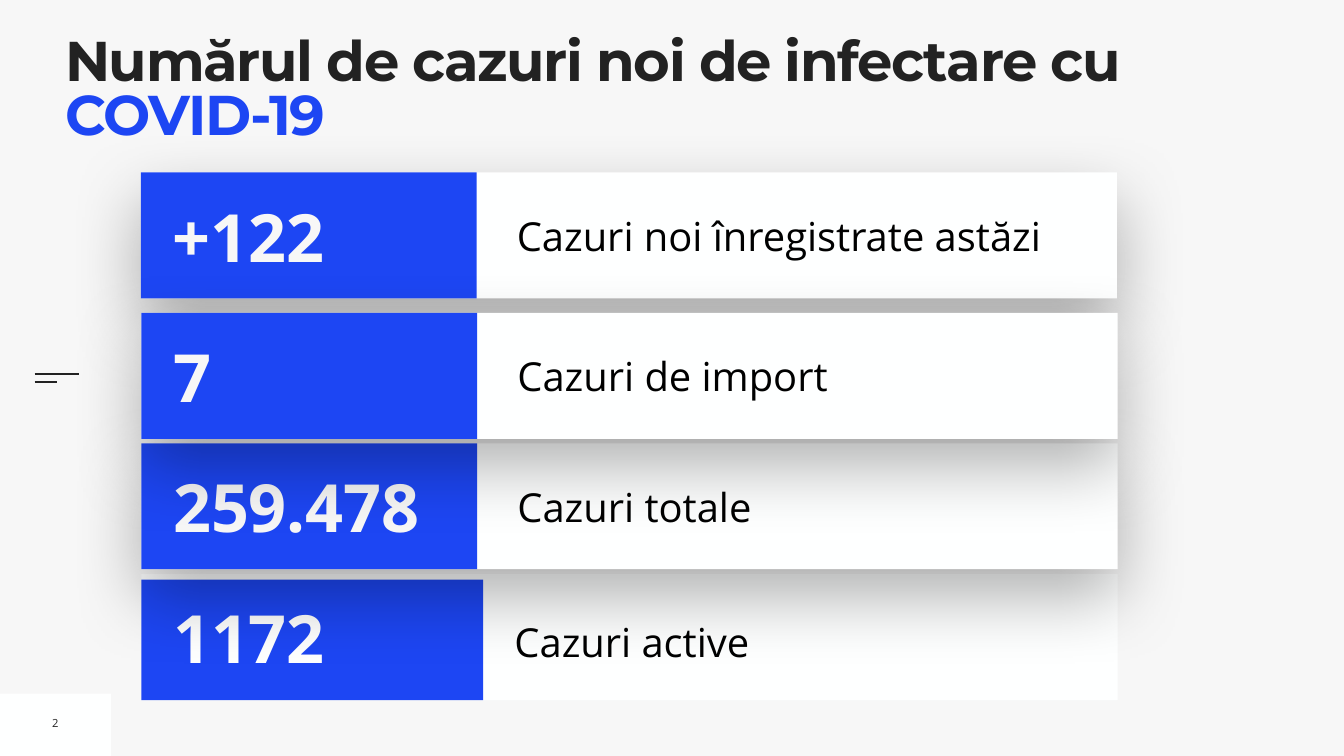
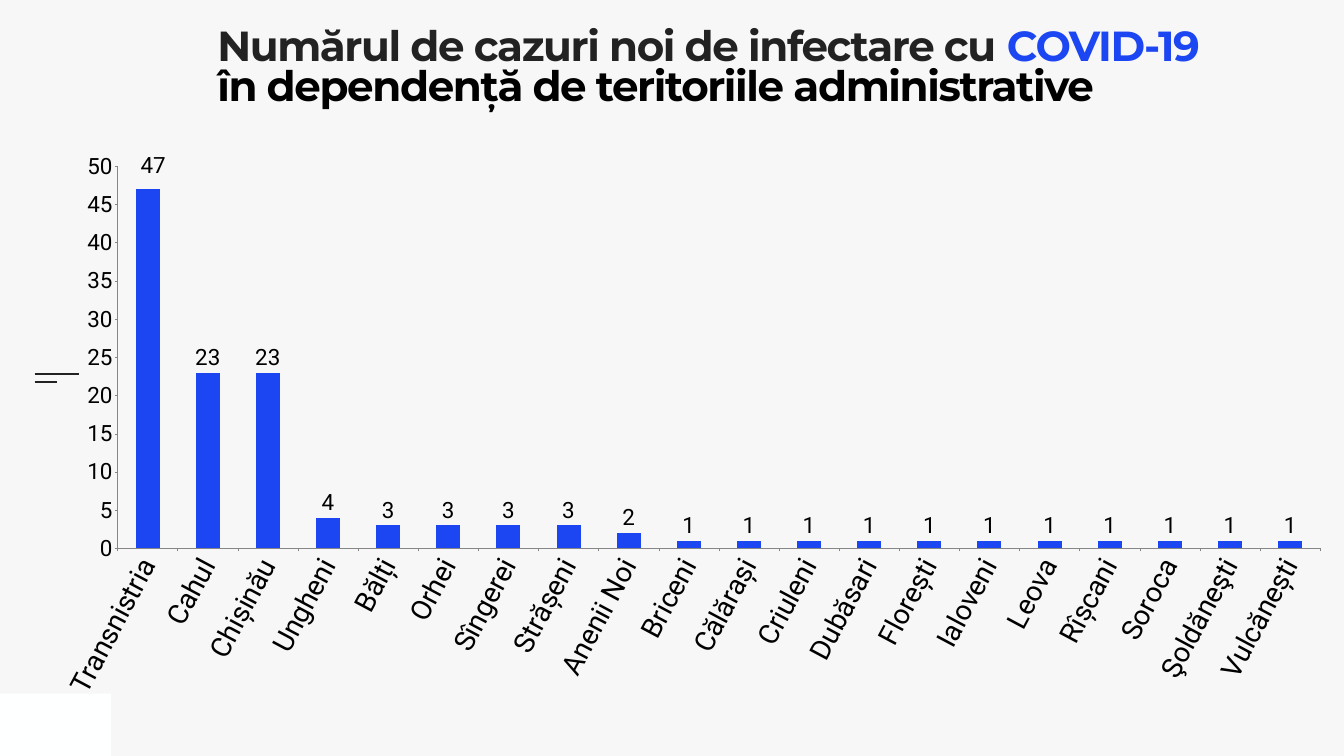
from lxml import etree
from pptx import Presentation
from pptx.chart.data import CategoryChartData
from pptx.dml.color import RGBColor
from pptx.enum import chart as kinds, shapes, text
from pptx.oxml import parse_xml
from pptx.oxml.ns import nsdecls, qn
from pptx.util import Cm, Pt

COLORS = {
    "paper": "F7F7F7",
    "white": "FEFFFF",
    "blue": "1D46F3",
    "ink": "222222",
    "black": "000000",
    "axis": "868686",
}
HEAD = "Numărul de cazuri noi de infectare cu "
VIRUS = "COVID-19"
CASES = {
    "Transnistria": 47, "Cahul": 23, "Chișinău": 23, "Ungheni": 4,
    "Bălți": 3, "Orhei": 3, "Sîngerei": 3, "Strășeni": 3, "Anenii Noi": 2,
    "Briceni": 1, "Călărași": 1, "Criuleni": 1, "Dubăsari": 1, "Florești": 1,
    "Ialoveni": 1, "Leova": 1, "Rîșcani": 1, "Soroca": 1, "Şoldăneşti": 1,
    "Vulcănești": 1,
}


def rgb(name):
    return RGBColor.from_string(COLORS[name])


def place(box):
    return [Cm(side) for side in box]


def style(font, face, size, color, bold=False):
    font.name, font.size, font.bold = face, Pt(size), bold
    font.color.rgb = rgb(color)


def block(parent, box, color):
    """Add a plain filled rectangle without line or shadow."""
    rect = parent.shapes.add_shape(shapes.MSO_SHAPE.RECTANGLE, *place(box))
    rect.fill.solid()
    rect.fill.fore_color.rgb = rgb(color)
    rect.line.fill.background()
    rect.shadow.inherit = False
    return rect


def shade(rect):
    """Give a rectangle a wide soft shadow that falls downwards."""
    effects = rect._element.spPr.find(qn("a:effectLst"))
    effects.append(parse_xml(
        f'<a:outerShdw {nsdecls("a")} blurRad="{Pt(100)}" dist="{Pt(40)}" '
        'dir="5400000" algn="ctr" rotWithShape="0"><a:srgbClr val="000000">'
        '<a:alpha val="30000"/></a:srgbClr></a:outerShdw>'))


def outline(parent, box):
    """Add an unfilled outline that carries text."""
    x, y, w, h = place(box)
    path = parent.shapes.build_freeform(x, y)
    path.add_line_segments([(x + w, y), (x + w, y + h), (x, y + h)])
    shape = path.convert_to_shape()
    shape.fill.background()
    shape.line.fill.background()
    shape.shadow.inherit = False
    return shape


def write(shape, words, size, color, bold=False, pad=0.25):
    frame = shape.text_frame
    frame.vertical_anchor = text.MSO_ANCHOR.MIDDLE
    frame.margin_left = frame.margin_right = Cm(pad)
    frame.margin_top = frame.margin_bottom = Cm(pad)
    frame.text = words
    para = frame.paragraphs[0]
    para.alignment = text.PP_ALIGN.LEFT
    style(para.runs[0].font, "Open Sans", size, color, bold)
    return para


def rule(slide, y, width):
    left = 1.75
    line = slide.shapes.add_connector(
        shapes.MSO_CONNECTOR.STRAIGHT, *place((left, y, left + width, y)))
    line.line.color.rgb = rgb("ink")
    line.line.width = Pt(3)
    etree.SubElement(line._element.spPr, qn("a:effectLst"))


def start(prs):
    """Add a slide with the corner block and the two side rules."""
    slide = prs.slides.add_slide(prs.slide_layouts[5])
    block(slide, (0, 34.96, 5.59, 3.14), "white")
    rule(slide, 18.84, 2.24)
    rule(slide, 19.26, 1.12)
    return slide


def title(slide, box, size, lines):
    """Fill the title; each line is a list of (words, color) pairs."""
    shape = slide.shapes.title
    shape.left, shape.top, shape.width, shape.height = place(box)
    frame = shape.text_frame
    frame.word_wrap = True
    frame.auto_size = text.MSO_AUTO_SIZE.NONE
    frame.vertical_anchor = text.MSO_ANCHOR.TOP
    frame.margin_left = frame.margin_right = 0
    frame.margin_top = frame.margin_bottom = 0
    for i, parts in enumerate(lines):
        para = frame.add_paragraph() if i else frame.paragraphs[0]
        para.alignment = text.PP_ALIGN.LEFT
        para.line_spacing = 0.8
        para.space_before = Pt(0)
        for words, color in parts:
            run = para.add_run()
            run.text = words
            style(run.font, "Montserrat", size, color, True)
            run._r.get_or_add_rPr().set("spc", "-195")


def row(slide, top, count, words, left=7.13, last=False):
    """Add a white band with a count on blue; the last band is flat."""
    group = slide.shapes.add_group_shape()
    band = block(group, (left, top, 49.2, 6.35), "white")
    if last:
        blue = (left, top + 0.28, 17.22, 6.07)
        spot = (left + 18.8, top + 1.47, 29.41, 3.18)
    else:
        shade(band)
        blue = (left, top, 16.92, 6.35)
        spot = (left + 18.7, top + 1.69, 29.87, 2.95)
    note = write(outline(group, spot), words, 57, "black",
                 pad=0 if last else 0.25)
    if last:
        note.line_spacing = 1.3
        note.space_before = Pt(20)
    block(group, blue, "blue")
    write(outline(group, (left + 1.35, top + 0.89, 15.32, 4.57)), count, 95,
          "white" if last else "paper", True)


def scale(axis, size):
    """Style one chart axis."""
    axis.has_major_gridlines = False
    axis.major_tick_mark = kinds.XL_TICK_MARK.OUTSIDE
    axis.minor_tick_mark = kinds.XL_TICK_MARK.NONE
    axis.format.line.color.rgb = rgb("axis")
    style(axis.tick_labels.font, "Roboto", size, "black")


def layout(inner, x, y, w=None, h=None):
    """Make a manual layout from fractions of the chart."""
    sides = "".join(f'<c:{k} val="{v:.4f}"/>'
                    for k, v in zip("xywh", (x, y, w, h)) if v is not None)
    modes = ('<c:layoutTarget val="inner"/><c:xMode val="edge"/>'
             '<c:yMode val="edge"/>') if inner else ""
    return parse_xml(f'<c:layout {nsdecls("c")}><c:manualLayout>'
                     f'{modes}{sides}</c:manualLayout></c:layout>')


def bars(slide, box, inner):
    """Add the chart in a box, with its plot in an inner box."""
    data = CategoryChartData()
    data.categories = list(CASES)
    data.add_series("Series 1", list(CASES.values()))
    chart = slide.shapes.add_chart(
        kinds.XL_CHART_TYPE.COLUMN_CLUSTERED, *place(box), data).chart
    chart.has_title = chart.has_legend = False
    style(chart.font, "Roboto", 40, "black")

    plot = chart.plots[0]
    plot.gap_width = 150
    plot.vary_by_categories = False
    series = plot.series[0]
    series.format.fill.solid()
    series.format.fill.fore_color.rgb = rgb("blue")
    marks = series.data_labels
    marks.show_value = True
    first = series.points[0].data_label
    for mark in (marks, first):
        mark.position = kinds.XL_LABEL_POSITION.OUTSIDE_END
        style(mark.font, "Roboto", 32, "black")

    left, top, width, height = box
    index = marks._element.find(qn("c:dLbl")).find(qn("c:idx"))
    index.addnext(layout(False, 0.28 / width, -0.42 / height))

    scale(chart.category_axis, 40)
    names = chart.category_axis._element.find(qn("c:txPr"))
    names.find(qn("a:bodyPr")).set("rot", "-3720000")
    values = chart.value_axis
    scale(values, 32)
    values.minimum_scale, values.maximum_scale = 0, 50
    values.major_unit = 5

    area = chart._chartSpace.chart.plotArea
    for old in area.findall(qn("c:layout")):
        area.remove(old)
    x, y, w, h = inner
    area.insert(0, layout(True, (x - left) / width, (y - top) / height,
                          w / width, h / height))


def main():
    prs = Presentation()
    prs.slide_width, prs.slide_height = Cm(67.74), Cm(38.1)
    back = prs.slide_master.background.fill
    back.solid()
    back.fore_color.rgb = rgb("paper")

    totals = start(prs)
    page = totals.shapes.add_textbox(*place((2.36, 35.79, 0.86, 1.3)))
    page.text_frame.word_wrap = False
    write(page, "2", 16, "ink").alignment = text.PP_ALIGN.CENTER
    title(totals, (3.28, 1.95, 60.81, 4.01), 80,
          [[(HEAD, "ink"), (VIRUS, "blue")]])
    row(totals, 28.93, "1172", "Cazuri active", last=True)
    row(totals, 8.69, "+122", "Cazuri noi înregistrate astăzi", left=7.1)
    row(totals, 22.34, "259.478", "Cazuri totale")
    row(totals, 15.77, "7", "Cazuri de import")

    places = start(prs)
    title(places, (10.95, 1.47, 50.85, 6.93), 60,
          [[(HEAD, "ink"), (VIRUS, "blue")],
           [("în dependență de teritoriile administrative", "black")]])
    bars(places, (2.79, 6.81, 63.93, 30.1), (5.93, 8.38, 60.61, 19.26))
    prs.save("out.pptx")


if __name__ == "__main__":
    main()
